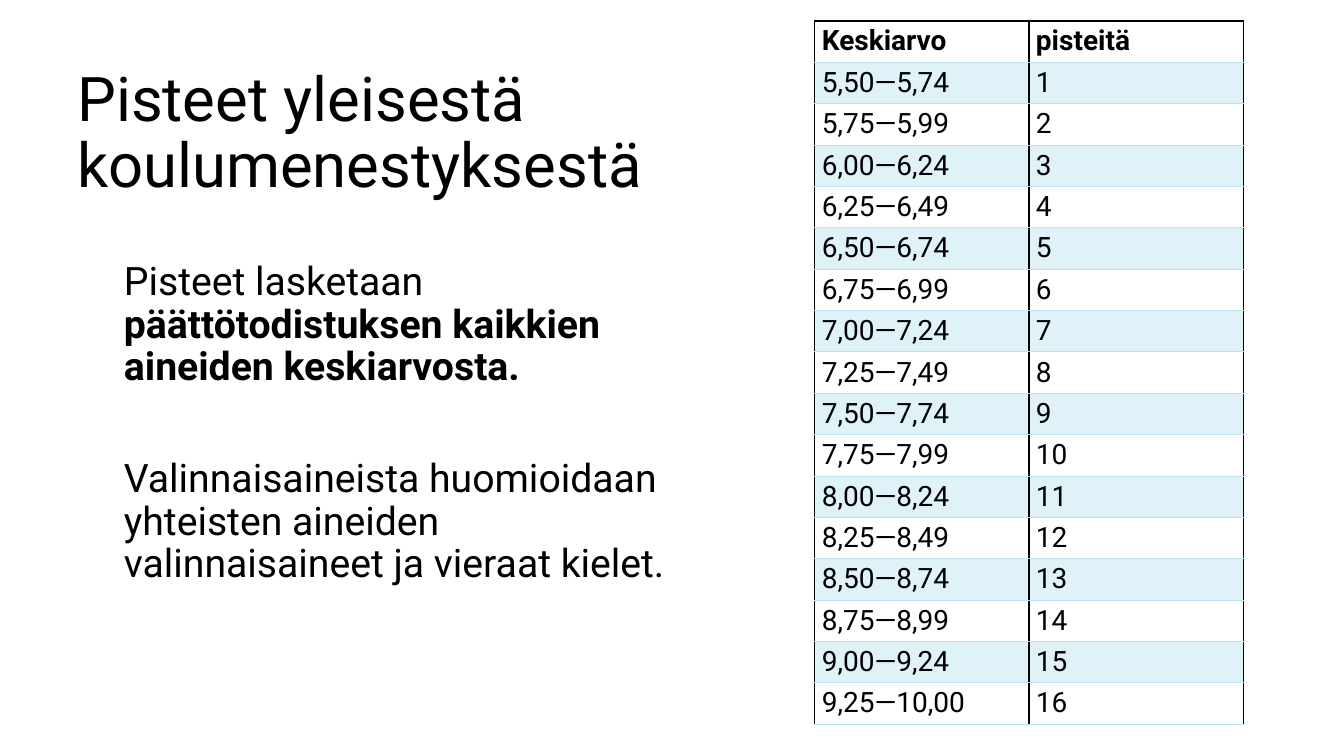
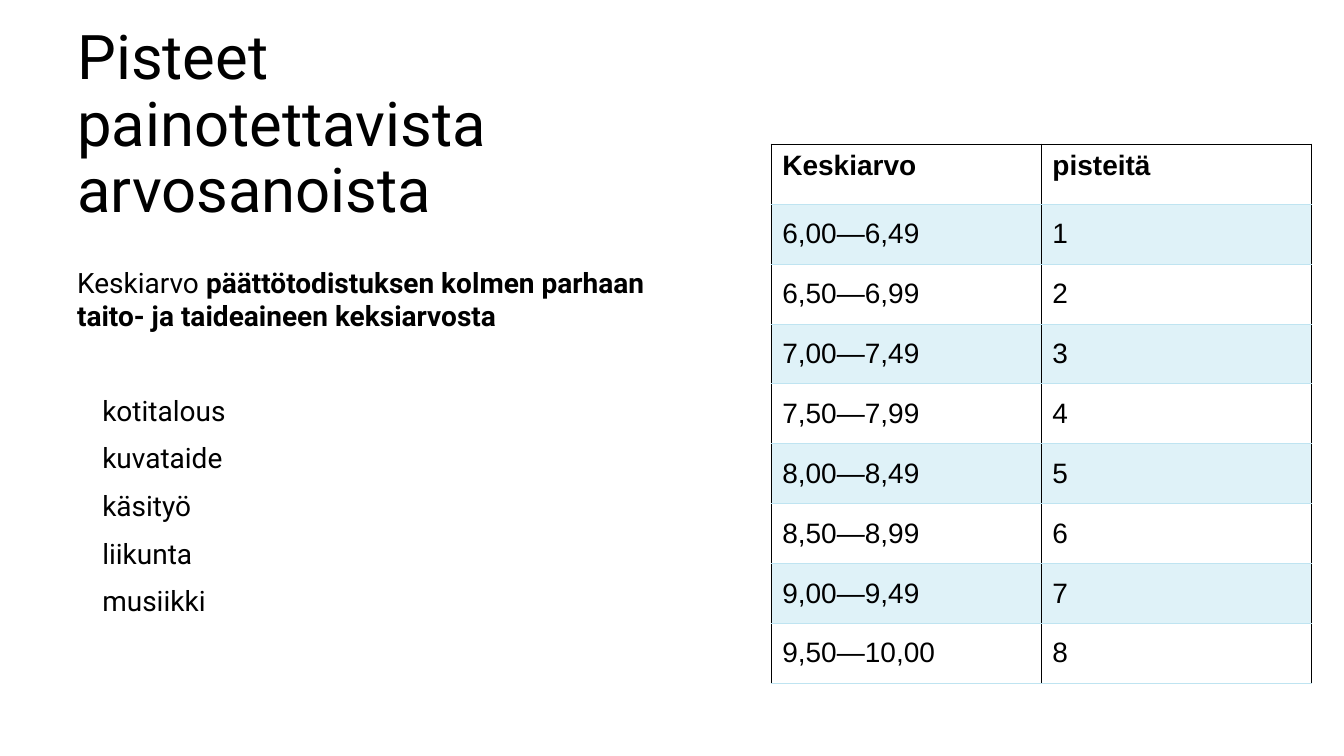
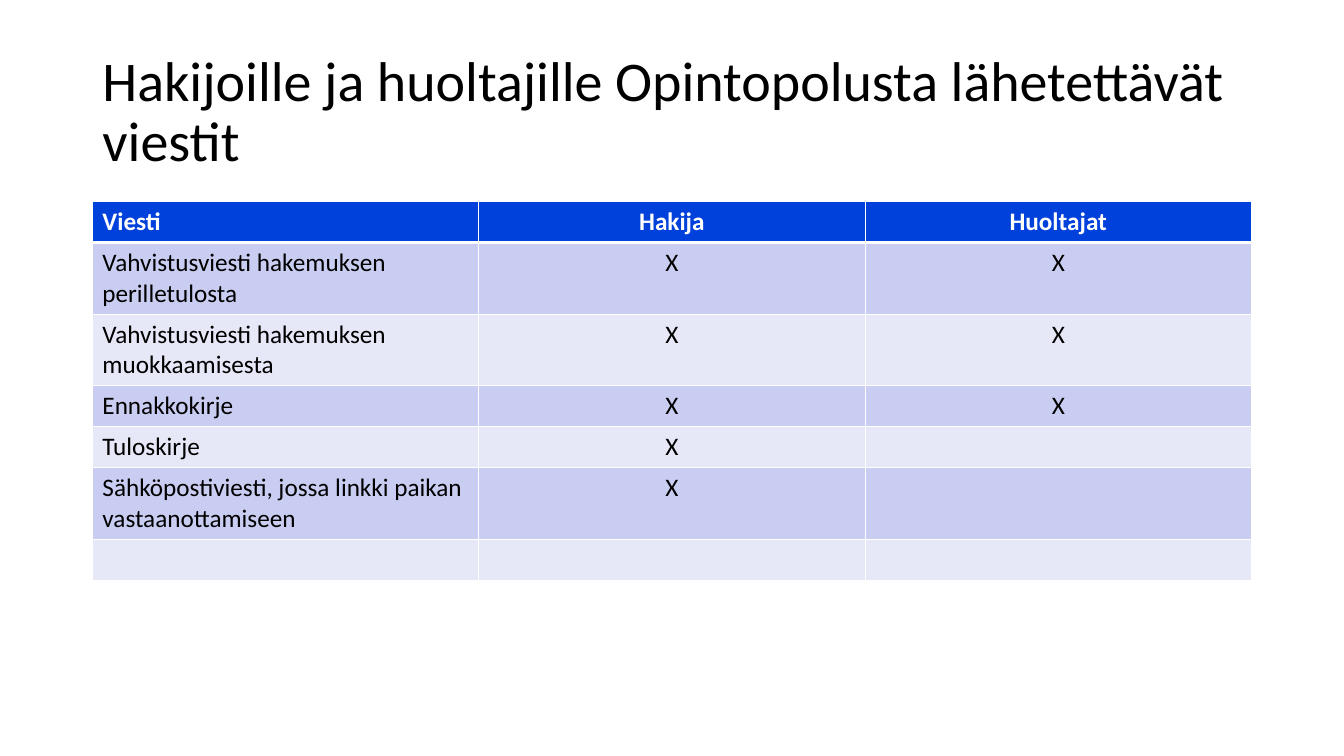
"""Build three slides on admission points and applicant messages."""
import pptx
import pptx.dml.color
import pptx.enum.text
import pptx.oxml
import pptx.oxml.ns
import pptx.util

Pt = pptx.util.Pt
ALIGN = pptx.enum.text.PP_ALIGN
ANCHOR = pptx.enum.text.MSO_ANCHOR

THEME = {
    "black": "000000", "white": "FFFFFF",
    "band": "DFF2F8", "rule": "BFE4F1",
    "header": "0041DC", "dark_band": "CACDF2", "light_band": "E6E8F8",
    "title": 44, "small_title": 40, "body": 28, "list": 20, "message": 18,
    "sans": "Roboto", "table_sans": "Arial", "office": "Calibri",
}

GENERAL_RANGES = [
    "5,50—5,74", "5,75—5,99", "6,00—6,24", "6,25—6,49", "6,50—6,74", "6,75—6,99",
    "7,00—7,24", "7,25—7,49", "7,50—7,74", "7,75—7,99", "8,00—8,24", "8,25—8,49",
    "8,50—8,74", "8,75—8,99", "9,00—9,24", "9,25—10,00",
]
WEIGHTED_RANGES = [
    "6,00—6,49", "6,50—6,99", "7,00—7,49", "7,50—7,99",
    "8,00—8,49", "8,50—8,99", "9,00—9,49", "9,50—10,00",
]
MESSAGES = [
    ("Viesti", "Hakija", "Huoltajat"),
    ("Vahvistusviesti hakemuksen perilletulosta", "X", "X"),
    ("Vahvistusviesti hakemuksen muokkaamisesta", "X", "X"),
    ("Ennakkokirje", "X", "X"),
    ("Tuloskirje", "X", ""),
    ("Sähköpostiviesti, jossa linkki paikan vastaanottamiseen", "X", ""),
    ("", "", ""),
]
MESSAGE_LINES = [1, 2, 2, 1, 1, 2, 1]
SUBJECTS = ["kotitalous", "kuvataide", "käsityö", "liikunta", "musiikki"]


def score_rows(ranges):
    return [("Keskiarvo", "pisteitä")] + [(span, str(n)) for n, span in enumerate(ranges, 1)]


SCORE_STYLE = {
    "header_fill": "white", "header_color": "black", "bands": ("band", "white"),
    "size": "list", "value_align": ALIGN.LEFT, "body_anchor": ANCHOR.MIDDLE,
    "side": ("black", 1), "line": ("rule", 0.5), "top": ("black", 1), "under_header": ("rule", 0.5),
}
MESSAGE_STYLE = {
    "header_fill": "header", "header_color": "white", "bands": ("dark_band", "light_band"),
    "size": "message", "font": "office", "insets": (7.2, 3.6),
    "value_align": ALIGN.CENTER, "body_anchor": ANCHOR.TOP,
    "side": ("white", 1), "line": ("white", 1), "top": ("white", 1), "under_header": ("white", 3),
}

SLIDES = [
    {
        "title": ("Pisteet yleisestä koulumenestyksestä", (48, 44, 594, 104.4),
                  "title", "sans", ANCHOR.MIDDLE),
        "table": {**SCORE_STYLE, "rows": score_rows(GENERAL_RANGES), "at": (582, 15, 306),
                  "heights": [29.56] * 17, "font": "sans", "insets": (5, 2.2)},
        "body": ((81.4, 183.6, 408, 342.7), "body", 0.9, [
            (0, 0, [("Pisteet lasketaan ", False),
                    ("päättötodistuksen kaikkien aineiden keskiarvosta.", True)]),
            (0, 50, [("Valinnaisaineista huomioidaan yhteisten aineiden "
                      "valinnaisaineet ja vieraat kielet.", False)]),
        ]),
    },
    {
        "title": ("Pisteet painotettavista arvosanoista", (48, 41, 422.6, 124),
                  "title", "sans", ANCHOR.BOTTOM),
        "table": {**SCORE_STYLE, "rows": score_rows(WEIGHTED_RANGES), "at": (550.8, 103, 386),
                  "heights": [42.8] * 9, "font": "table_sans", "insets": (8, 4)},
        "body": ((48, 185.8, 422.6, 286.6), "list", 1.0, [
            (0, 0, [("Keskiarvo ", False),
                    ("päättötodistuksen kolmen parhaan taito- ja taideaineen keksiarvosta", True)]),
        ] + [(18, 10 if i else 43.5, [(name, False)]) for i, name in enumerate(SUBJECTS)]),
    },
    {
        "title": ("Hakijoille ja huoltajille Opintopolusta lähetettävät viestit",
                  (66, 28.8, 828, 104.4), "small_title", "office", ANCHOR.MIDDLE),
        "table": {**MESSAGE_STYLE, "rows": MESSAGES, "at": (66, 144, 828),
                  "heights": [7.2 + 22 * n for n in MESSAGE_LINES]},
    },
]


def apply(target, values):
    for name, value in values.items():
        setattr(target, name, value)


def rgb(name):
    return pptx.dml.color.RGBColor.from_string(THEME[name])


def add_run(p, text, size, font, color="black", bold=False):
    r = p.add_run()
    r.text = text
    apply(r.font, {"size": Pt(THEME[size]), "name": THEME[font], "bold": bold})
    r.font.color.rgb = rgb(color)


def set_title(s, text, at, size, font, anchor):
    sp = s.shapes.title
    apply(sp, dict(zip(("left", "top", "width", "height"), map(Pt, at))))
    tf = sp.text_frame
    apply(tf, {"word_wrap": True, "vertical_anchor": anchor,
               "auto_size": pptx.enum.text.MSO_AUTO_SIZE.NONE})
    p = tf.paragraphs[0]
    apply(p, {"alignment": ALIGN.LEFT, "line_spacing": 0.9})
    add_run(p, text, size, font)


def add_body(s, at, size, spacing, paragraphs):
    tf = s.shapes.add_textbox(*map(Pt, at)).text_frame
    tf.word_wrap = True
    for i, (indent, before, runs) in enumerate(paragraphs):
        p = tf.add_paragraph() if i else tf.paragraphs[0]
        apply(p, {"line_spacing": spacing, "space_before": Pt(before)})
        if indent:
            p._p.get_or_add_pPr().set("marL", str(Pt(indent)))
        for text, bold in runs:
            add_run(p, text, size, "sans", bold=bold)


def set_borders(cell, borders):
    tc_pr = cell._tc.get_or_add_tcPr()
    for i, (side, (color, width)) in enumerate(borders.items()):
        tc_pr.insert(i, pptx.oxml.parse_xml(
            f'<a:ln{side} {pptx.oxml.ns.nsdecls("a")} w="{Pt(width)}"><a:solidFill>'
            f'<a:srgbClr val="{THEME[color]}"/></a:solidFill></a:ln{side}>'))


def add_grid(s, t):
    rows, (left, top, width) = t["rows"], t["at"]
    count = len(rows[0])
    grid = s.shapes.add_table(len(rows), count, Pt(left), Pt(top),
                              Pt(width), Pt(sum(t["heights"]))).table
    apply(grid, {"first_row": False, "horz_banding": False})
    for column in grid.columns:
        column.width = Pt(width / count)
    x, y = map(Pt, t["insets"])
    for i, row in enumerate(rows):
        grid.rows[i].height = Pt(t["heights"][i])
        head = i == 0
        above = t["top"] if head else t["under_header"] if i == 1 else t["line"]
        below = t["under_header"] if head else t["line"]
        for j, text in enumerate(row):
            cell = grid.cell(i, j)
            apply(cell, {"margin_left": x, "margin_right": x, "margin_top": y, "margin_bottom": y,
                         "vertical_anchor": ANCHOR.TOP if head else t["body_anchor"]})
            cell.fill.solid()
            cell.fill.fore_color.rgb = rgb(t["header_fill"] if head else t["bands"][(i - 1) % 2])
            set_borders(cell, {"L": t["side"], "R": t["side"], "T": above, "B": below})
            if text:
                p = cell.text_frame.paragraphs[0]
                p.alignment = t["value_align"] if j else ALIGN.LEFT
                add_run(p, text, t["size"], t["font"],
                        t["header_color"] if head else "black", head)


def main():
    prs = pptx.Presentation()
    apply(prs, {"slide_width": Pt(960), "slide_height": Pt(540)})
    for content in SLIDES:
        s = prs.slides.add_slide(prs.slide_layouts[5])
        set_title(s, *content["title"])
        add_grid(s, content["table"])
        if "body" in content:
            add_body(s, *content["body"])
    prs.save("out.pptx")


if __name__ == "__main__":
    main()
